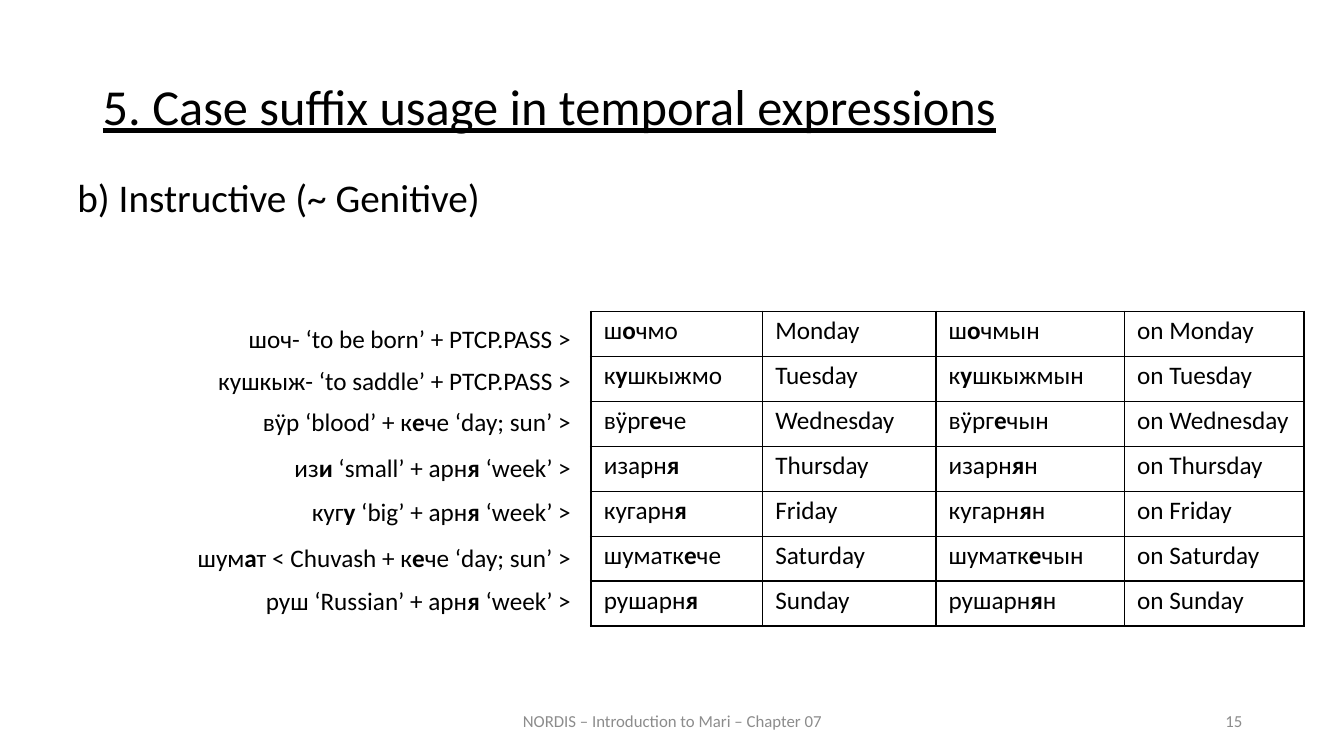
"""Build a slide on Mari weekday names and their instructive forms."""
from dataclasses import dataclass

from lxml import etree
from pptx import Presentation
from pptx.dml.color import RGBColor
from pptx.enum.text import MSO_ANCHOR, PP_ALIGN
from pptx.oxml.ns import qn
from pptx.util import Inches, Pt

LEFT, MID, RIGHT, FULL = PP_ALIGN.LEFT, PP_ALIGN.CENTER, PP_ALIGN.RIGHT, PP_ALIGN.JUSTIFY
TOP, HALF = MSO_ANCHOR.TOP, MSO_ANCHOR.MIDDLE
COLORS = {"ink": "000000", "gray": "8C8C8C"}
FONT = "Calibri"
THIN, THICK = 1, 1.5
WIDTHS = (1.7, 1.72, 1.87, 1.78)
HEIGHT = 3.12


@dataclass
class Box:
    left: float
    top: float
    width: float
    height: float


@dataclass
class Day:
    name: str
    noun: str
    form: str
    root: str
    box: Box


DAYS = [
    Day("Monday", "ш*о*чмо", "ш*о*чмын",
        "шоч- ‘to be born’ + PTCP.PASS >", Box(1.92, 3.09, 3.84, 0.57)),
    Day("Tuesday", "к*у*шкыжмо", "к*у*шкыжмын",
        "кушкыж- ‘to saddle’ + PTCP.PASS >", Box(0.51, 3.46, 5.25, 0.66)),
    Day("Wednesday", "вӱрг*е*че", "вӱрг*е*чын",
        "вӱр ‘blood’ + к*е*че ‘day; sun’ >", Box(0.51, 3.87, 5.25, 0.66)),
    Day("Thursday", "изарн*я*", "изарн*я*н",
        "из*и *‘small’ + арн*я* ‘week’ >", Box(0.51, 4.33, 5.25, 0.66)),
    Day("Friday", "кугарн*я*", "кугарн*я*н",
        "куг*у *‘big’ + арн*я* ‘week’ >", Box(0.51, 4.76, 5.25, 0.66)),
    Day("Saturday", "шуматк*е*че", "шуматк*е*чын",
        "шум*а*т < Chuvash + к*е*че ‘day; sun’ >", Box(0.51, 5.22, 5.25, 0.66)),
    Day("Sunday", "рушарн*я*", "рушарн*я*н",
        "руш ‘Russian’ + арн*я* ‘week’ >", Box(0.51, 5.65, 5.25, 0.66)),
]


def write(frame, text: str, *, size: float = 18, color: str = "ink", align=LEFT,
          line: float = 1.0, before: float = 0, under: bool = False) -> None:
    """Fill a text frame, setting the parts between asterisks in bold."""
    para = frame.paragraphs[0]
    para.alignment = align
    para.line_spacing = line
    para.space_before = Pt(before)
    for i, part in enumerate(text.split("*")):
        if part:
            run = para.add_run()
            run.text = part
            font = run.font
            font.name, font.size = FONT, Pt(size)
            font.bold = i % 2 == 1
            font.underline = under
            font.color.rgb = RGBColor.from_string(COLORS[color])


def label(slide, box: Box, text: str, anchor=TOP, **style) -> None:
    """Add a wrapped text box."""
    shape = slide.shapes.add_textbox(
        Inches(box.left), Inches(box.top), Inches(box.width), Inches(box.height))
    frame = shape.text_frame
    frame.word_wrap = True
    frame.vertical_anchor = anchor
    write(frame, text, **style)


def border(cell, sides: dict[str, float]) -> None:
    """Draw the borders of a cell, with widths in points."""
    props = cell._tc.get_or_add_tcPr()
    for i, (side, width) in enumerate(sides.items()):
        line = etree.Element(qn(f"a:ln{side}"), w=str(Pt(width)))
        fill = etree.SubElement(line, qn("a:solidFill"))
        etree.SubElement(fill, qn("a:srgbClr"), val=COLORS["ink"])
        props.insert(i, line)


def grid(slide) -> None:
    """Add the table of weekdays."""
    last = len(DAYS) - 1
    table = slide.shapes.add_table(
        len(DAYS), len(WIDTHS), Inches(5.86), Inches(3.09),
        Inches(sum(WIDTHS)), Inches(HEIGHT)).table
    table.first_row = table.horz_banding = False
    for col, width in zip(table.columns, WIDTHS):
        col.width = Inches(width)
    for r, day in enumerate(DAYS):
        table.rows[r].height = Inches(HEIGHT / len(DAYS))
        for c, text in enumerate((day.noun, day.name, day.form, f"on {day.name}")):
            cell = table.cell(r, c)
            cell.fill.background()
            cell.margin_left = cell.margin_right = Inches(0.13)
            cell.margin_top, cell.margin_bottom = Inches(0.02), Inches(0)
            write(cell.text_frame, text, align=FULL, line=1.07)
            border(cell, {
                "L": THIN if c % 2 else THICK,
                "R": THICK if c % 2 else THIN,
                "T": THICK if r == 0 else THIN,
                "B": THICK if r == last else THIN,
            })


def main() -> None:
    """Build and save the slide."""
    deck = Presentation()
    deck.slide_width, deck.slide_height = Inches(13.33), Inches(7.5)
    slide = deck.slides.add_slide(deck.slide_layouts[6])
    label(slide, Box(4.42, 6.95, 4.5, 0.4), "NORDIS – Introduction to Mari – Chapter 07",
          HALF, size=12, color="gray", align=MID)
    label(slide, Box(9.42, 6.95, 3, 0.4), "15", HALF, size=12, color="gray", align=RIGHT)
    label(slide, Box(0.92, 0.76, 11.5, 0.83), "5. Case suffix usage in temporal expressions",
          size=36, align=FULL, line=0.9, before=12, under=True)
    label(slide, Box(0.67, 1.67, 8.24, 0.57), "b) Instructive (~ Genitive)", size=28)
    grid(slide)
    for day in DAYS:
        label(slide, day.box, day.root, HALF, align=RIGHT, line=0.9, before=10)
    deck.save("out.pptx")


if __name__ == "__main__":
    main()
